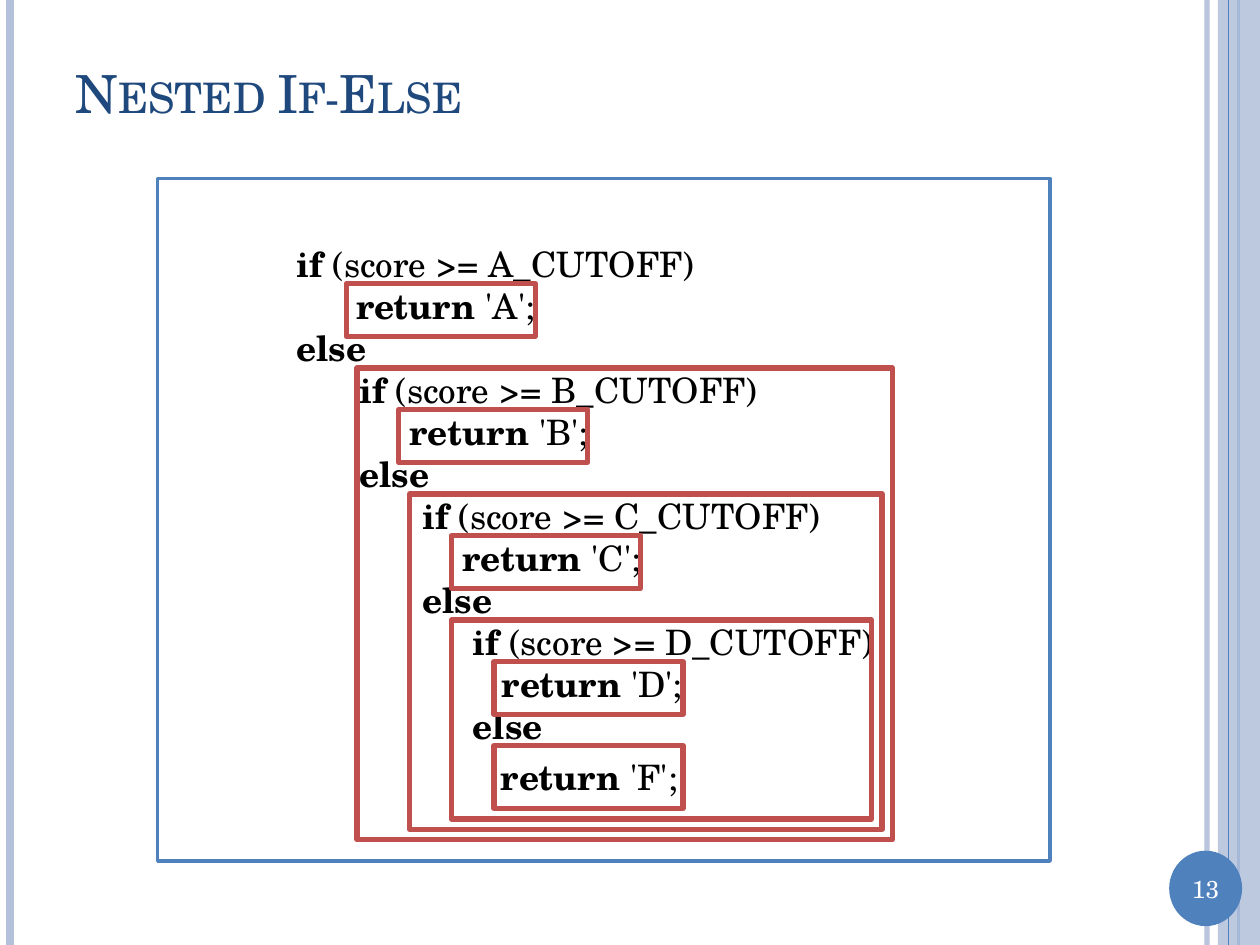
from dataclasses import dataclass

from pptx import Presentation
from pptx.dml.color import RGBColor
from pptx.enum.shapes import MSO_CONNECTOR as Link, MSO_SHAPE as Form
from pptx.enum.text import MSO_ANCHOR as Anchor, PP_ALIGN as Align
from pptx.oxml.ns import qn
from pptx.util import Cm, Pt
from lxml.etree import SubElement as Sub


@dataclass(frozen=True)
class Theme:
    font: str = "TeX Gyre Schola"
    white: str = "FFFFFF"
    black: str = "000000"
    navy: str = "1F497D"
    blue: str = "4F81BD"
    pale: str = "B3C1DB"
    red: str = "C0504D"
    head: int = 30
    code: int = 20
    num: int = 14


def fade(node, pct):
    """Set the opacity of the first solid colour below node."""
    color = next(node.iter(qn("a:srgbClr")))
    Sub(color, qn("a:alpha")).set("val", str(pct * 1000))


class Page:
    def __init__(self, slide, theme):
        self.shapes = slide.shapes
        self.look = theme

    def shape(self, form, x, y, w, h, fill=None, line=None, width=1):
        item = self.shapes.add_shape(form, Cm(x), Cm(y), Cm(w), Cm(h))
        item.shadow.inherit = False
        if fill:
            item.fill.solid()
            item.fill.fore_color.rgb = RGBColor.from_string(fill)
        else:
            item.fill.background()
        if line:
            item.line.color.rgb = RGBColor.from_string(line)
            item.line.width = Pt(width)
        else:
            item.line.fill.background()
        return item

    def frame(self, x, y, w, h):
        return self.shape(Form.RECTANGLE, x, y, w, h, line=self.look.red, width=3)

    def rule(self, x, color, width):
        item = self.shapes.add_connector(Link.STRAIGHT, Cm(x), 0, Cm(x), Cm(19.05))
        item.line.color.rgb = RGBColor.from_string(color)
        item.line.width = Pt(width)
        Sub(item._element.spPr, qn("a:effectLst"))
        return item

    def run(self, para, text, size, color, bold=False):
        run = para.add_run()
        run.text = text
        font = run.font
        font.name, font.size, font.bold = self.look.font, Pt(size), bold
        font.color.rgb = RGBColor.from_string(color)
        return run

    def label(self, x, y, w, h, text, size, color, align=Align.LEFT):
        frame = self.shapes.add_textbox(Cm(x), Cm(y), Cm(w), Cm(h)).text_frame
        frame.word_wrap = True
        frame.vertical_anchor = Anchor.MIDDLE
        para = frame.paragraphs[0]
        para.alignment = align
        return self.run(para, text, size, color)

    def code(self, box, lines):
        frame = box.text_frame
        frame.word_wrap = True
        frame.vertical_anchor = Anchor.MIDDLE
        for i, (indent, word, rest) in enumerate(lines):
            para = frame.add_paragraph() if i else frame.paragraphs[0]
            para.alignment = Align.LEFT
            props = para._p.get_or_add_pPr()
            props.set("marL", str(Cm(indent)))
            props.set("indent", "0")
            self.run(para, word, self.look.code, self.look.black, True)
            if rest:
                self.run(para, rest, self.look.code, self.look.black)
        para.space_before = para.space_after = Pt(5)


def main():
    deck = Presentation()
    deck.slide_width, deck.slide_height = Cm(25.4), Cm(19.05)
    look = Theme()
    page = Page(deck.slides.add_slide(deck.slide_layouts[6]), look)

    # Side stripes
    fade(page.rule(24.33, look.pale, 3)._element.spPr, 93)
    page.rule(0.21, look.pale, 4.5)
    page.rule(24.97, look.blue, 1.5)
    band = page.shape(Form.RECTANGLE, 24.55, 0, 0.85, 19.05, look.pale)
    fade(band._element.spPr, 87)
    page.rule(24.77, look.blue, 0.75)

    # Page number
    page.shape(Form.OVAL, 23.57, 17.15, 1.47, 1.52, look.blue)
    page.label(23.57, 17.48, 1.47, 0.86, "13", look.num, look.white, Align.CENTER)

    # Title
    title = page.label(1.27, 0.76, 22.02, 2.21, "Nested If-Else", look.head, look.navy)
    title.font._element.set("cap", "small")

    # Code: indents of if/else and of return for each grade
    steps = [("A", 2.54, 3.75), ("B", 3.81, 4.83),
             ("C", 5.08, 5.89), ("D", 6.1, 6.69)]
    lines = []
    for grade, outer, inner in steps:
        lines += [(outer, "if", f" (score >= {grade}_CUTOFF)"),
                  (inner, "return", f" '{grade}';"),
                  (outer, "else", "")]
    lines.append((6.67, "return", " 'F';"))
    box = page.shape(Form.RECTANGLE, 3.18, 3.6, 17.99, 13.76,
                     look.white, look.blue, 2)
    page.code(box, lines)

    # Frames round each nested statement
    step, inset = 2.54, 0.21
    for i, x in enumerate([7.2, 8.26, 9.1]):
        y = 7.42 + i * step
        page.frame(x, y, 17.99 - i * inset - x, 16.93 - i * inset - y)

    # Frames round each return
    for i, x in enumerate([6.98, 8.04, 9.1, 9.96]):
        page.frame(x, 5.72 + i * step, 3.81, 1.06)
    page.frame(9.96, 15.03, 3.81, 1.27)

    deck.save("out.pptx")


if __name__ == "__main__":
    main()
